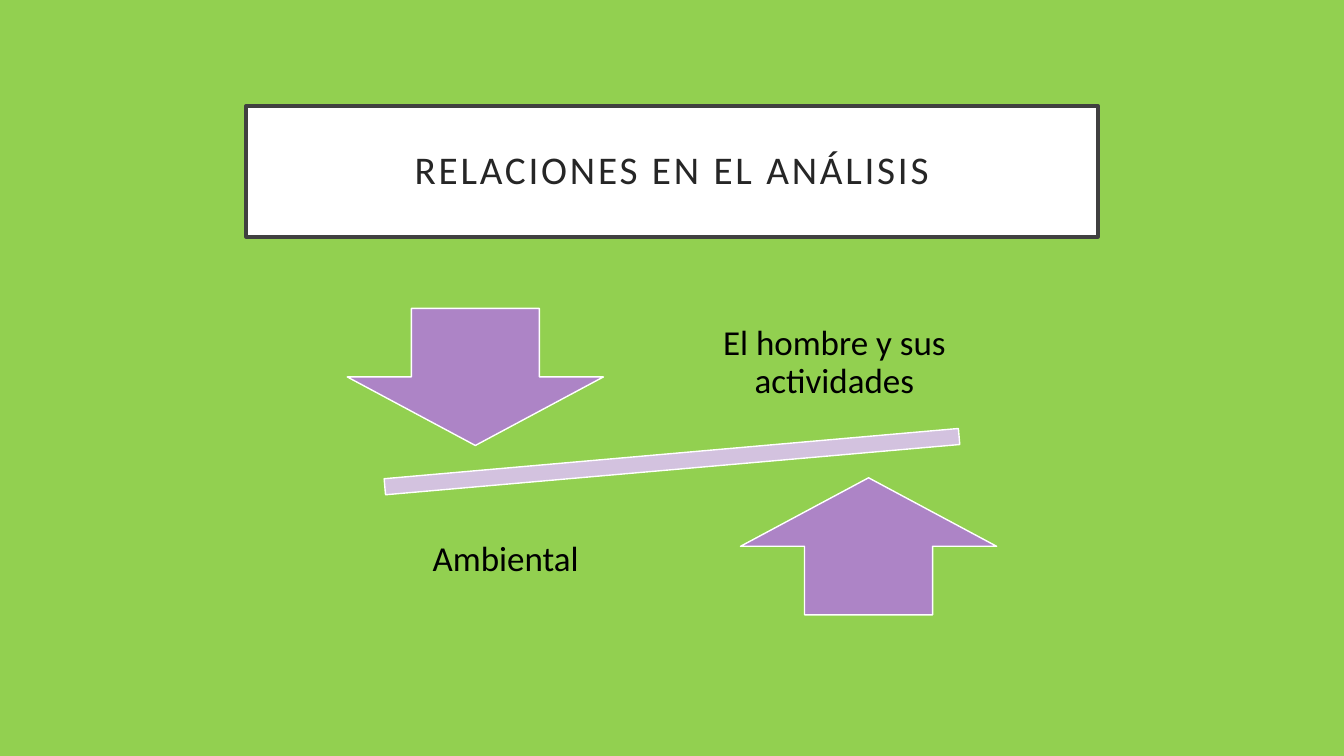
import pptx
import pptx.dml.color
import pptx.enum.shapes
import pptx.enum.text
import pptx.util

RGBColor = pptx.dml.color.RGBColor
SHAPE = pptx.enum.shapes.MSO_SHAPE

GREEN = RGBColor(0x92, 0xD0, 0x50)
WHITE = RGBColor(0xFF, 0xFF, 0xFF)
BLACK = RGBColor(0x00, 0x00, 0x00)
DARK_GRAY = RGBColor(0x40, 0x40, 0x40)
TITLE_GRAY = RGBColor(0x26, 0x26, 0x26)
PURPLE = RGBColor(0xAD, 0x84, 0xC6)
PALE_PURPLE = RGBColor(0xD3, 0xC2, 0xDF)

FONT = "Calibri"
SLIDE_WIDTH, SLIDE_HEIGHT = 13.33, 7.5

# Centres and sizes in inches; offsets are measured from the pivot of the balance.
TITLE_CENTER, TITLE_SIZE = (SLIDE_WIDTH / 2, 1.7), (8.45, 1.3)
PIVOT = (SLIDE_WIDTH / 2, 4.58)
BEAM_SIZE, BEAM_TILT = (7.78, 0.68), -5
ARROW_SIZE, ARROW_OFFSET = (2.54, 1.36), (1.95, 0.84)
LABEL_SIZE, LABEL_OFFSET = (2.71, 1.42), (1.61, 0.98)


def frame(center, size):
    """Return left, top, width and height of a box around a centre."""
    corner = [middle - length / 2 for middle, length in zip(center, size)]
    return [pptx.util.Inches(length) for length in (*corner, *size)]


def from_pivot(offset, across, down):
    """Return the point at an offset from the pivot, in the given directions."""
    return PIVOT[0] + across * offset[0], PIVOT[1] + down * offset[1]


def add_figure(page, kind, center, size, fill, line, line_width):
    shape = page.shapes.add_shape(kind, *frame(center, size))
    shape.shadow.inherit = False
    shape.fill.solid()
    shape.fill.fore_color.rgb = fill
    shape.line.color.rgb = line
    shape.line.width = pptx.util.Pt(line_width)
    return shape


def write_centered(box, text, size, color, inset, tracking=0):
    text_frame = box.text_frame
    text_frame.word_wrap = True
    text_frame.vertical_anchor = pptx.enum.text.MSO_ANCHOR.MIDDLE
    for side in ("left", "top", "right", "bottom"):
        setattr(text_frame, f"margin_{side}", pptx.util.Inches(inset))
    para = text_frame.paragraphs[0]
    para.alignment = pptx.enum.text.PP_ALIGN.CENTER
    para.line_spacing = 0.9
    span = para.add_run()
    span.text = text
    span.font.name = FONT
    span.font.size = pptx.util.Pt(size)
    span.font.color.rgb = color
    if tracking:
        span.font._element.set("spc", str(tracking * 100))


def add_label(page, text, center):
    box = page.shapes.add_textbox(*frame(center, LABEL_SIZE))
    write_centered(box, text, 25, BLACK, 0.19)


def add_balance(page):
    beam = add_figure(page, SHAPE.MATH_MINUS, PIVOT, BEAM_SIZE, PALE_PURPLE, WHITE, 1)
    beam.rotation = BEAM_TILT
    sides = (
        (SHAPE.DOWN_ARROW, "El hombre y sus actividades", -1),
        (SHAPE.UP_ARROW, "Ambiental ", 1),
    )
    for arrow, text, side in sides:
        add_figure(page, arrow, from_pivot(ARROW_OFFSET, side, side),
                   ARROW_SIZE, PURPLE, WHITE, 1)
        add_label(page, text, from_pivot(LABEL_OFFSET, -side, side))


def main():
    deck = pptx.Presentation()
    deck.slide_width = pptx.util.Inches(SLIDE_WIDTH)
    deck.slide_height = pptx.util.Inches(SLIDE_HEIGHT)
    page = deck.slides.add_slide(deck.slide_layouts[6])
    page.background.fill.solid()
    page.background.fill.fore_color.rgb = GREEN

    title = add_figure(page, SHAPE.RECTANGLE, TITLE_CENTER, TITLE_SIZE,
                       WHITE, DARK_GRAY, 2.5)
    write_centered(title, "RELACIONES EN EL ANÁLISIS", 28, TITLE_GRAY, 0.2, tracking=2)
    add_balance(page)
    deck.save("out.pptx")


if __name__ == "__main__":
    main()
